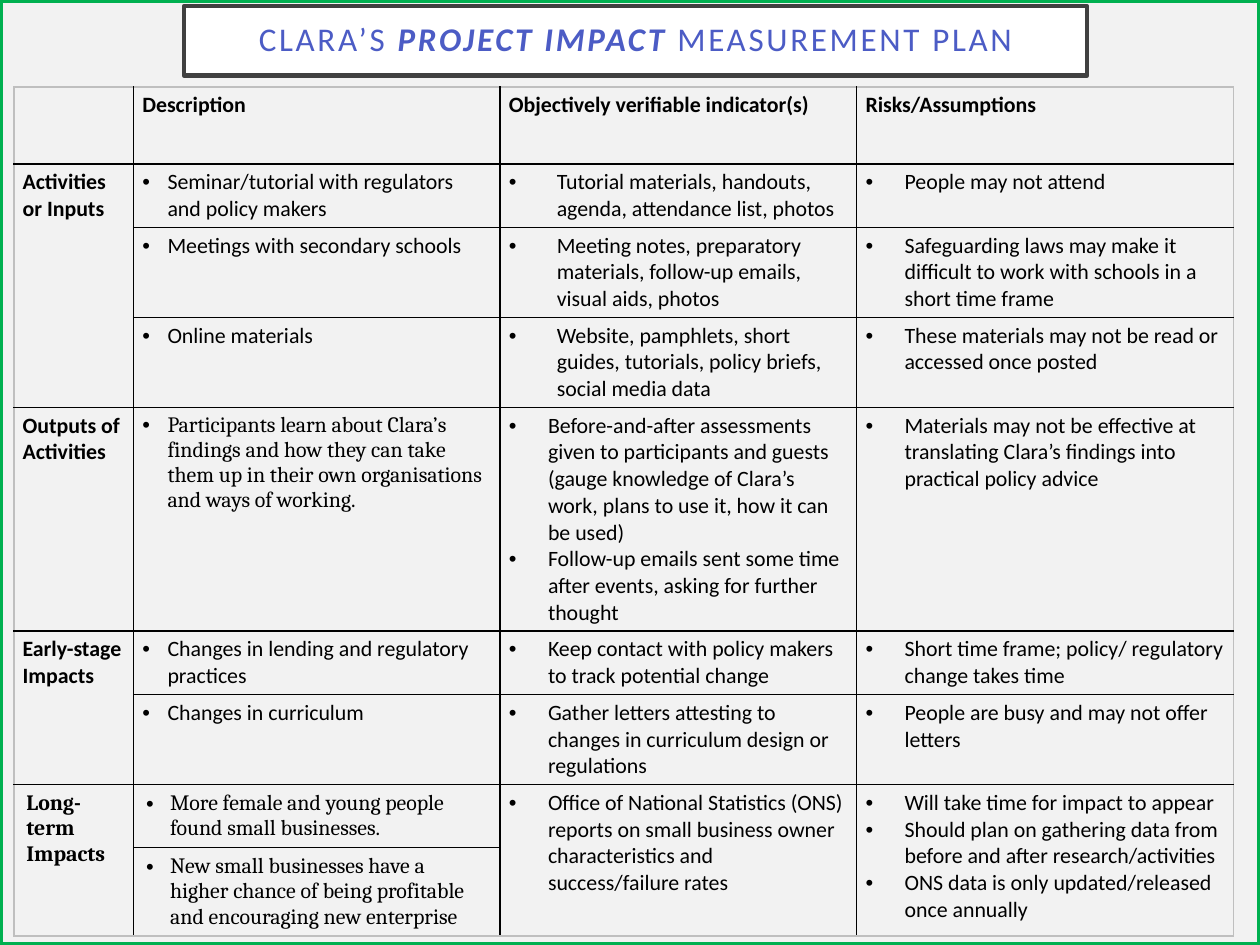
from dataclasses import dataclass

from lxml.etree import SubElement
from pptx import Presentation
from pptx.dml.color import RGBColor
from pptx.enum.shapes import MSO_SHAPE
from pptx.enum.text import MSO_ANCHOR, PP_ALIGN
from pptx.oxml import parse_xml
from pptx.oxml.ns import nsdecls, qn
from pptx.util import Inches, Pt

BLACK = RGBColor(0, 0, 0)
WHITE = RGBColor(255, 255, 255)
PAPER = RGBColor(0xF2, 0xF2, 0xF2)
CHARCOAL = RGBColor(0x40, 0x40, 0x40)
INDIGO = RGBColor(0x4C, 0x5C, 0xC5)
GREEN = RGBColor(0, 0xB0, 0x50)
SILVER = RGBColor(0xBF, 0xBF, 0xBF)

COLUMN_WIDTHS = (0.95, 2.91, 2.83, 2.99)
ROW_HEIGHTS = (0.61, 0.49, 0.68, 0.66, 1.46, 0.48, 0.47, 0.47, 0.47)
TIGHT = dict(margin_left=0.07, margin_right=0.07, margin_top=0.04, margin_bottom=0.04)
ROOMY = dict(margin_left=0.1, margin_right=0.1, margin_top=0.05, margin_bottom=0.05)
TITLE_MARGINS = dict.fromkeys(TIGHT, 0.2)


@dataclass(frozen=True)
class Entry:
    row: int
    column: int
    lines: tuple[str, ...]
    indent: float = 0
    font: str = "Calibri"
    roomy: bool = False
    row_span: int = 1


def heading(row: int, column: int, text: str, **options) -> Entry:
    return Entry(row, column, (text,), **options)


def activity(row: int, text: str, **options) -> Entry:
    return Entry(row, 1, (text,), **{"indent": 0.2, **options})


def indicator(row: int, *lines: str, indent: float = 0.31, **options) -> Entry:
    return Entry(row, 2, lines, indent, **options)


def risk(row: int, *lines: str, **options) -> Entry:
    return Entry(row, 3, lines, 0.31, **options)


LONG_TERM = dict(font="Cambria", roomy=True)
ENTRIES = (
    heading(0, 1, "Description"),
    heading(0, 2, "Objectively verifiable indicator(s)"),
    heading(0, 3, "Risks/Assumptions"),
    heading(1, 0, "Activities or Inputs", row_span=3),
    activity(1, "Seminar/tutorial with regulators and policy makers"),
    indicator(1, "Tutorial materials, handouts, agenda, attendance list, photos", indent=0.38),
    risk(1, "People may not attend"),
    activity(2, "Meetings with secondary schools"),
    indicator(2, "Meeting notes, preparatory materials, follow-up emails, visual aids, photos",
              indent=0.38),
    risk(2, "Safeguarding laws may make it difficult to work with schools in a short time frame"),
    activity(3, "Online materials"),
    indicator(3, "Website, pamphlets, short guides, tutorials, policy briefs, social media data",
              indent=0.38),
    risk(3, "These materials may not be read or accessed once posted"),
    heading(4, 0, "Outputs of Activities"),
    activity(4, "Participants learn about Clara’s findings and how they can take them up "
                "in their own organisations and ways of working.", font="Cambria"),
    indicator(4, "Before-and-after assessments given to participants and guests "
                 "(gauge knowledge of Clara’s work, plans to use it, how it can be used)",
              "Follow-up emails sent some time after events, asking for further thought"),
    risk(4, "Materials may not be effective at translating Clara’s findings into "
            "practical policy advice"),
    heading(5, 0, "Early-stage Impacts", row_span=2),
    activity(5, "Changes in lending and regulatory practices"),
    indicator(5, "Keep contact with policy makers to track potential change"),
    risk(5, "Short time frame; policy/ regulatory change takes time"),
    activity(6, "Changes in curriculum"),
    indicator(6, "Gather letters attesting to changes in curriculum design or regulations"),
    risk(6, "People are busy and may not offer letters"),
    heading(7, 0, "Long-term Impacts", row_span=2, **LONG_TERM),
    activity(7, "More female and young people found small businesses.", indent=0.19, **LONG_TERM),
    indicator(7, "Office of National Statistics (ONS) reports on small business owner "
                 "characteristics and success/failure rates", row_span=2),
    risk(7, "Will take time for impact to appear",
         "Should plan on gathering data from before and after research/activities",
         "ONS data is only updated/released once annually", row_span=2),
    activity(8, "New small businesses have a higher chance of being profitable and "
                "encouraging new enterprise", indent=0.19, **LONG_TERM),
)


def set_values(target, values: dict) -> None:
    for attribute, value in values.items():
        setattr(target, attribute, value)


def set_margins(target, margins: dict) -> None:
    set_values(target, {side: Inches(inset) for side, inset in margins.items()})


def add_run(paragraph, text: str, color: RGBColor, **font_format):
    run = paragraph.add_run()
    run.text = text
    set_values(run.font, font_format)
    run.font.color.rgb = color
    return run


def add_bullet(paragraph, indent: float) -> None:
    properties = paragraph._p.get_or_add_pPr()
    properties.set("marL", str(Inches(indent)))
    properties.set("indent", str(-Inches(indent)))
    SubElement(properties, qn("a:buFont")).set("typeface", "Arial")
    SubElement(properties, qn("a:buChar")).set("char", "•")


def set_borders(cell, colors: dict[str, RGBColor]) -> None:
    for position, (side, color) in enumerate(colors.items()):
        border = parse_xml(
            f'<a:{side} {nsdecls("a")} w="{Pt(1)}"><a:solidFill>'
            f'<a:srgbClr val="{color}"/></a:solidFill></a:{side}>')
        cell._tc.get_or_add_tcPr().insert(position, border)


def fill_entry(table, entry: Entry) -> None:
    cell = table.cell(entry.row, entry.column)
    if entry.row_span > 1:
        cell.merge(table.cell(entry.row + entry.row_span - 1, entry.column))
    set_margins(cell, ROOMY if entry.roomy else TIGHT)
    for index, line in enumerate(entry.lines):
        frame = cell.text_frame
        paragraph = frame.add_paragraph() if index else frame.paragraphs[0]
        if entry.indent:
            add_bullet(paragraph, entry.indent)
        add_run(paragraph, line, BLACK, name=entry.font, size=Pt(12.5), bold=not entry.indent)


def add_plan(slide) -> None:
    rows, columns = len(ROW_HEIGHTS), len(COLUMN_WIDTHS)
    plan = slide.shapes.add_table(
        rows, columns, Inches(0.11), Inches(0.69), Inches(9.69), Inches(6.68))
    table = plan.table
    set_values(table, dict(first_row=False, horz_banding=False))
    for column, width in zip(table.columns, COLUMN_WIDTHS):
        column.width = Inches(width)
    for row, height in zip(table.rows, ROW_HEIGHTS):
        row.height = Inches(height)
    plan.height = Inches(6.68)
    for entry in ENTRIES:
        fill_entry(table, entry)
    for index, cell in enumerate(table.iter_cells()):
        row, column = divmod(index, columns)
        bottom = row + (cell.span_height if cell.is_merge_origin else 1)
        outer = dict(lnL=column == 0, lnR=column == columns - 1, lnT=row == 0, lnB=bottom == rows)
        cell.fill.background()
        set_borders(cell, {side: SILVER if edge else BLACK for side, edge in outer.items()})


def add_box(slide, bounds: tuple[float, ...], line: RGBColor, weight: float):
    box = slide.shapes.add_shape(MSO_SHAPE.RECTANGLE, *map(Inches, bounds))
    box.shadow.inherit = False
    box.fill.background()
    box.line.color.rgb = line
    box.line.width = Pt(weight)
    return box


def add_title(slide) -> None:
    banner = add_box(slide, (1.46, 0.05, 7.17, 0.55), CHARCOAL, 2.5)
    banner.fill.solid()
    banner.fill.fore_color.rgb = WHITE
    frame = banner.text_frame
    set_values(frame, dict(word_wrap=True, vertical_anchor=MSO_ANCHOR.MIDDLE))
    set_margins(frame, TITLE_MARGINS)
    paragraph = frame.paragraphs[0]
    set_values(paragraph, dict(alignment=PP_ALIGN.CENTER, line_spacing=0.9))
    for text, strong in (("CLARA’S ", False), ("PROJECT IMPACT", True),
                         (" MEASUREMENT PLAN", False)):
        run = add_run(paragraph, text, INDIGO, name="Calibri", size=Pt(18.9),
                      bold=strong, italic=strong)
        run.font._element.set("spc", "150")


def main() -> None:
    """Build the project impact measurement plan slide."""
    deck = Presentation()
    set_values(deck, dict(slide_width=Inches(10), slide_height=Inches(7.5)))
    slide = deck.slides.add_slide(deck.slide_layouts[6])
    slide.background.fill.solid()
    slide.background.fill.fore_color.rgb = PAPER
    add_title(slide)
    add_plan(slide)
    add_box(slide, (0, 0, 10, 7.5), GREEN, 3.5)
    deck.save("out.pptx")


if __name__ == "__main__":
    main()
